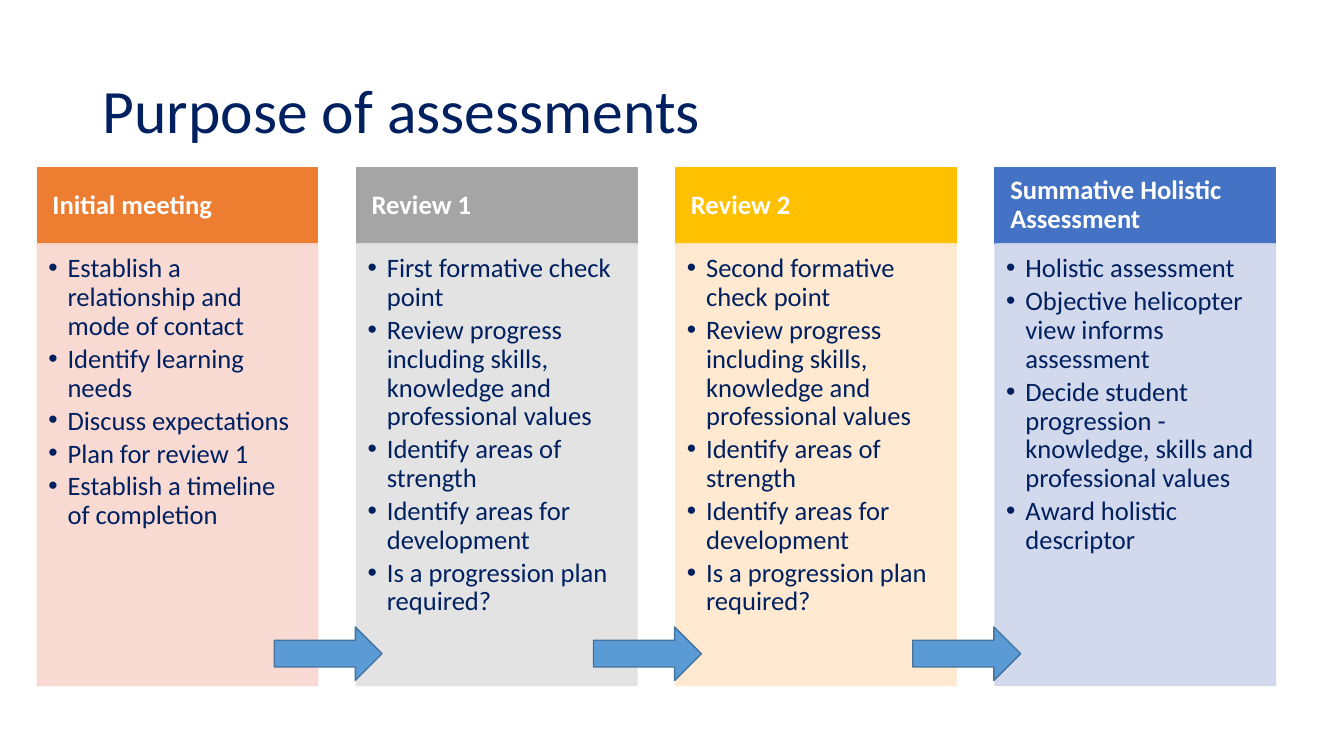
from dataclasses import dataclass

from lxml.etree import SubElement
from pptx import Presentation
from pptx.dml.color import RGBColor
from pptx.enum.shapes import MSO_SHAPE
from pptx.enum.text import MSO_ANCHOR, MSO_AUTO_SIZE, PP_ALIGN
from pptx.oxml.ns import qn
from pptx.util import Inches, Pt


@dataclass(frozen=True)
class Theme:
    font: str = "Calibri"
    title_size: int = 44
    text_size: int = 19
    ink: str = "002060"
    heading_ink: str = "FFFFFF"
    arrow_fill: str = "5B9BD5"
    arrow_line: str = "43739E"
    line_spacing: float = 0.9
    panel_opacity: int = 90


@dataclass(frozen=True)
class Grid:
    left: float = 0.37
    top: float = 1.66
    total_width: float = 12.28
    column_width: float = 2.78
    heading_height: float = 0.76
    panel_height: float = 4.38
    count: int = 4

    def column(self, index):
        pitch = (self.total_width - self.column_width) / (self.count - 1)
        return self.left + index * pitch


REVIEW_TASKS = [
    "Review progress including skills, knowledge and professional values",
    "Identify areas of strength",
    "Identify areas for development",
    "Is a progression plan required?",
]

# Heading, heading colour, panel colour, points
STAGES = [
    ("Initial meeting", "ED7D31", "F8D7CE", [
        "Establish a relationship and mode of contact",
        "Identify learning needs",
        "Discuss expectations",
        "Plan for review 1",
        "Establish a timeline of completion",
    ]),
    ("Review 1", "A5A5A5", "E1E1E1", ["First formative check point", *REVIEW_TASKS]),
    ("Review 2", "FFC000", "FFE8CC", ["Second formative check point", *REVIEW_TASKS]),
    ("Summative Holistic Assessment", "4472C4", "CFD5EA", [
        "Holistic assessment",
        "Objective helicopter view informs assessment",
        "Decide student progression - knowledge, skills and professional values",
        "Award holistic descriptor",
    ]),
]


def set_opacity(shape, percent):
    """Apply the same opacity to a shape's solid fill and its outline."""
    for color in shape._element.spPr.iter(qn("a:srgbClr")):
        SubElement(color, qn("a:alpha"), val=str(percent * 1000))


def add_bullet(para, indent):
    properties = para._p.get_or_add_pPr()
    properties.set("marL", str(Inches(indent)))
    properties.set("indent", str(-Inches(indent)))
    SubElement(properties, qn("a:buFont"), typeface="Arial")
    SubElement(properties, qn("a:buChar"), char="•")


class SlideBuilder:
    def __init__(self, slide, theme, grid):
        self.slide = slide
        self.theme = theme
        self.grid = grid

    def format_para(self, para, size, color, bold=False, space_after=0):
        para.alignment = PP_ALIGN.LEFT
        para.line_spacing = self.theme.line_spacing
        para.space_before = Pt(0)
        para.space_after = Pt(space_after)
        for span in para.runs:
            span.font.name = self.theme.font
            span.font.size = Pt(size)
            span.font.bold = bold
            span.font.color.rgb = RGBColor.from_string(color)

    def title(self, text):
        box = self.slide.shapes.title
        box.left, box.top = Inches(0.92), Inches(0.4)
        box.width, box.height = Inches(11.5), Inches(1.45)
        frame = box.text_frame
        frame.text = text
        frame.auto_size = MSO_AUTO_SIZE.NONE
        frame.vertical_anchor = MSO_ANCHOR.MIDDLE
        self.format_para(frame.paragraphs[0], self.theme.title_size, self.theme.ink)

    def shape(self, kind, left, top, width, height, fill, line):
        shape = self.slide.shapes.add_shape(
            kind, Inches(left), Inches(top), Inches(width), Inches(height))
        shape.shadow.inherit = False
        shape.fill.solid()
        shape.fill.fore_color.rgb = RGBColor.from_string(fill)
        shape.line.color.rgb = RGBColor.from_string(line)
        shape.line.width = Pt(1)
        return shape

    def text_block(self, index, top, height, fill, insets, anchor):
        box = self.shape(MSO_SHAPE.RECTANGLE, self.grid.column(index), top,
                         self.grid.column_width, height, fill, fill)
        frame = box.text_frame
        frame.word_wrap = True
        frame.vertical_anchor = anchor
        (frame.margin_left, frame.margin_top,
         frame.margin_right, frame.margin_bottom) = map(Inches, insets)
        return box

    def heading(self, index, text, fill):
        box = self.text_block(index, self.grid.top, self.grid.heading_height, fill,
                              (0.15, 0.08, 0.15, 0.08), MSO_ANCHOR.MIDDLE)
        box.text_frame.text = text
        self.format_para(box.text_frame.paragraphs[0], self.theme.text_size,
                         self.theme.heading_ink, bold=True)

    def panel(self, index, points, fill):
        box = self.text_block(index, self.grid.top + self.grid.heading_height,
                              self.grid.panel_height, fill,
                              (0.11, 0.11, 0.15, 0.17), MSO_ANCHOR.TOP)
        set_opacity(box, self.theme.panel_opacity)
        box.text_frame.text = "\n".join(points)
        for para in box.text_frame.paragraphs:
            para.level = 1
            self.format_para(para, self.theme.text_size, self.theme.ink, space_after=3)
            add_bullet(para, 0.19)

    def arrow(self, index):
        """Draw the arrow that leads from one column to the next."""
        self.shape(MSO_SHAPE.RIGHT_ARROW, self.grid.column(index) + 2.35, 6.22,
                   1.07, 0.53, self.theme.arrow_fill, self.theme.arrow_line)


def main():
    deck = Presentation()
    deck.slide_width, deck.slide_height = Inches(13.33), Inches(7.5)
    page = deck.slides.add_slide(deck.slide_layouts.get_by_name("Title Only"))
    builder = SlideBuilder(page, Theme(), Grid(count=len(STAGES)))
    builder.title("Purpose of assessments")
    for index, (heading, heading_fill, panel_fill, points) in enumerate(STAGES):
        builder.heading(index, heading, heading_fill)
        builder.panel(index, points, panel_fill)
    for index in range(len(STAGES) - 1):
        builder.arrow(index)
    deck.save("out.pptx")


if __name__ == "__main__":
    main()
